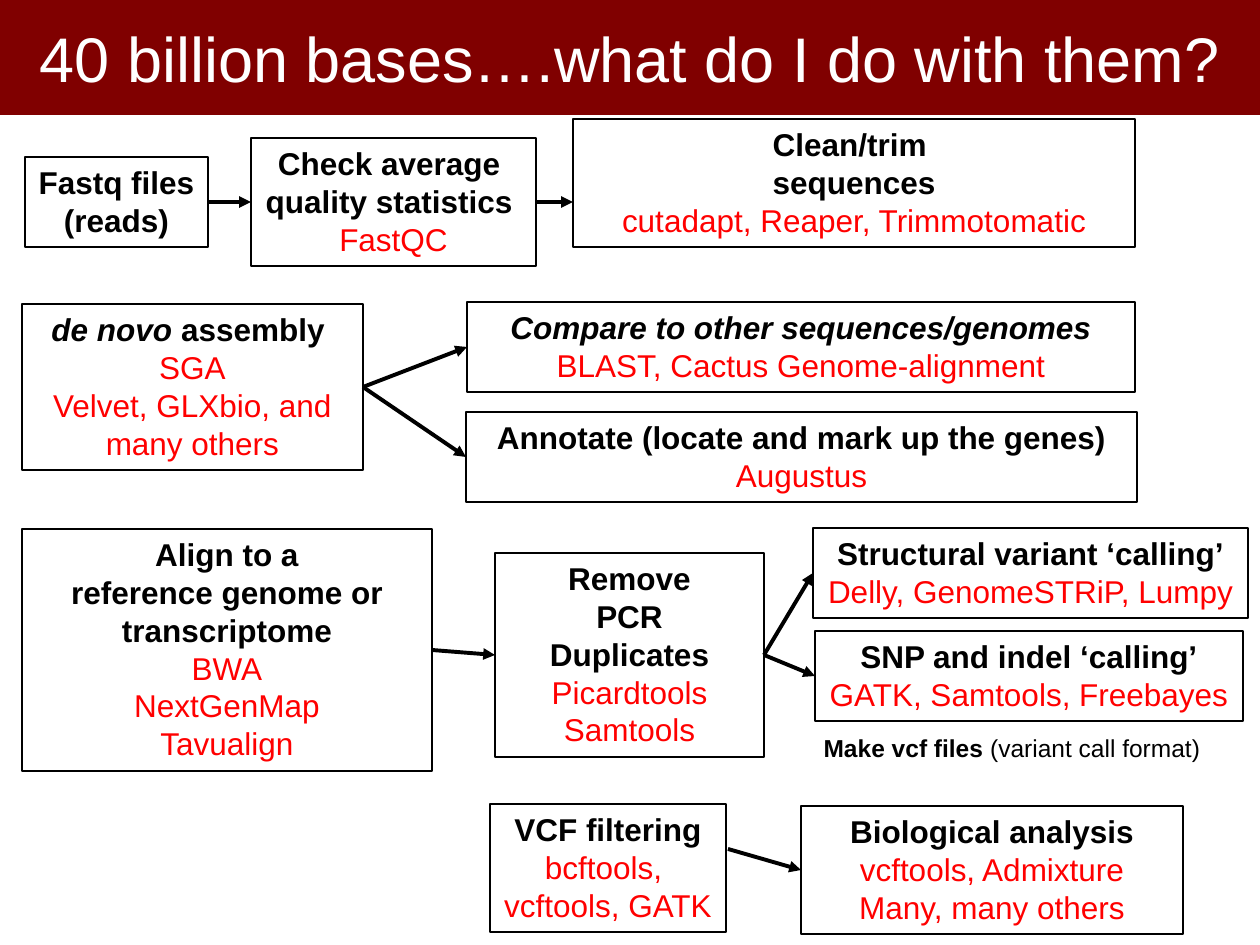
"""Build a slide that charts the steps of a sequencing analysis."""
from lxml.etree import SubElement
from pptx import Presentation
from pptx.dml.color import RGBColor
from pptx.enum.shapes import MSO_CONNECTOR as CONN, MSO_SHAPE as SHAPE
from pptx.enum.text import MSO_ANCHOR as ANCHOR, MSO_AUTO_SIZE as AUTO, PP_ALIGN as ALIGN
from pptx.oxml.ns import qn
from pptx.util import Emu, Pt

BLACK = RGBColor(0x00, 0x00, 0x00)
WHITE = RGBColor(0xFF, 0xFF, 0xFF)
RED = RGBColor(0xFF, 0x00, 0x00)
MAROON = RGBColor(0x80, 0x00, 0x00)
LEFT, RIGHT = 1, 3


def px(n):
    return Emu(round(n * 914400 / 126))


def add_run(p, text, size=18, color=BLACK, bold=False, italic=False):
    r = p.add_run()
    r.text = text
    r.font.name = "Arial"
    r.font.size = Pt(size)
    r.font.color.rgb = color
    r.font.bold = bold
    r.font.italic = italic


class Deck:
    def __init__(self, prs):
        self.s = prs.slides.add_slide(prs.slide_layouts[6])

    def fill_text(self, tf, paragraphs, wrap=True, anchor=ANCHOR.TOP, auto=AUTO.SHAPE_TO_FIT_TEXT):
        tf.word_wrap = wrap
        tf.auto_size = auto
        tf.vertical_anchor = anchor
        for i, runs in enumerate(paragraphs):
            p = tf.add_paragraph() if i else tf.paragraphs[0]
            p.alignment = ALIGN.CENTER
            for text, fmt in runs:
                add_run(p, text, **fmt)

    def rect(self, x, y, w, h):
        sp = self.s.shapes.add_shape(SHAPE.RECTANGLE, px(x), px(y), px(w), px(h))
        sp.shadow.inherit = False
        return sp

    def title(self, text, w, h):
        sp = self.rect(0, 0, w, h)
        sp.fill.solid()
        sp.fill.fore_color.rgb = MAROON
        sp.line.fill.background()
        runs = [(text, dict(size=36, color=WHITE))]
        self.fill_text(sp.text_frame, [runs], anchor=ANCHOR.MIDDLE, auto=AUTO.NONE)

    def step(self, x, y, w, h, heads, tools=(), wrap=True, italic=False):
        sp = self.rect(x, y, w, h)
        sp.fill.background()
        sp.line.color.rgb = BLACK
        sp.line.width = Pt(0.75)
        paragraphs = [
            [(t, dict(bold=True, italic=italic))] if isinstance(t, str) else t for t in heads
        ]
        paragraphs += [[(t, dict(color=RED))] for t in tools]
        self.fill_text(sp.text_frame, paragraphs, wrap)
        return sp

    def note(self, x, y, w, h, runs):
        sp = self.s.shapes.add_textbox(px(x), px(y), px(w), px(h))
        self.fill_text(sp.text_frame, [runs])

    def arrow(self, start, end):
        ends = [e if isinstance(e, tuple) else (0, 0) for e in (start, end)]
        cx = self.s.shapes.add_connector(CONN.STRAIGHT, *(px(v) for e in ends for v in e))
        if not isinstance(start, tuple):
            cx.begin_connect(start, RIGHT)
        if not isinstance(end, tuple):
            cx.end_connect(end, LEFT)
        cx.line.color.rgb = BLACK
        cx.line.width = Pt(2.25)
        SubElement(cx.get_or_add_ln(), qn("a:tailEnd"), type="triangle")
        SubElement(cx.element.spPr, qn("a:effectLst"))


def main():
    prs = Presentation()
    prs.slide_width, prs.slide_height = px(1260), px(945)
    d = Deck(prs)
    d.title("40 billion bases….what do I do with them?", 1260, 115)

    fastq = d.step(25, 157, 183, 90, ["Fastq files", "(reads)"], wrap=False)
    check = d.step(251, 138, 285, 128, ["Check average ", "quality statistics "],
                   ["FastQC"], wrap=False)
    d.step(573, 119, 562, 128, ["Clean/trim ", "sequences"], ["cutadapt, Reaper, Trimmotomatic"])
    d.arrow(fastq, check)
    d.arrow(check, (573, 202))

    de_novo = [("de novo ", dict(bold=True, italic=True)), ("assembly ", dict(bold=True))]
    assembly = d.step(22, 304, 341, 166, [de_novo], ["SGA", "Velvet, GLXbio, and many others"])
    compare = d.step(467, 302, 668, 90, ["Compare to other sequences/genomes"],
                     ["BLAST, Cactus Genome-alignment"], italic=True)
    annotate = d.step(466, 412, 671, 90, ["Annotate (locate and mark up the genes)"], ["Augustus"])
    d.arrow(assembly, compare)
    d.arrow(assembly, annotate)

    align = d.step(22, 529, 410, 242, ["Align to a", "reference genome or", "transcriptome"],
                   ["BWA", "NextGenMap", "Tavualign"])
    dedup = d.step(495, 553, 269, 204, ["Remove", "PCR", "Duplicates"],
                   ["Picardtools", "Samtools"])
    structural = d.step(813, 528, 435, 90, ["Structural variant ‘calling’"],
                        ["Delly, GenomeSTRiP, Lumpy"], wrap=False)
    snp = d.step(815, 631, 428, 90, ["SNP and indel ‘calling’"],
                 ["GATK, Samtools, Freebayes"], wrap=False)
    d.note(801, 727, 422, 43, [("Make vcf files", dict(size=14, bold=True)),
                               (" (variant call format)", dict(size=14))])
    d.arrow(align, dedup)
    d.arrow(dedup, structural)
    d.arrow(dedup, snp)

    d.step(490, 804, 236, 128, ["VCF filtering"], ["bcftools, ", "vcftools, GATK"], wrap=False)
    biology = d.step(801, 806, 382, 128, ["Biological analysis"],
                     ["vcftools, Admixture", "Many, many others"])
    d.arrow((728, 849), biology)

    prs.save("out.pptx")


if __name__ == "__main__":
    main()
